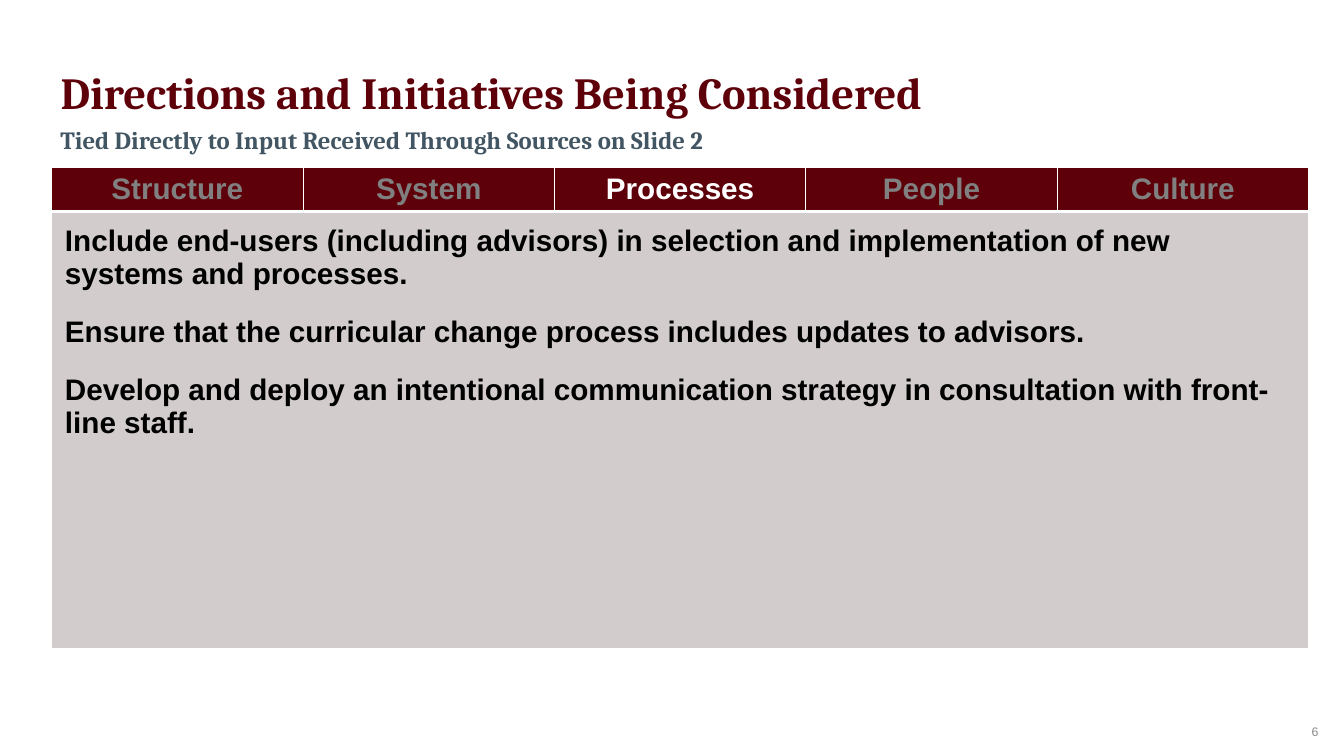
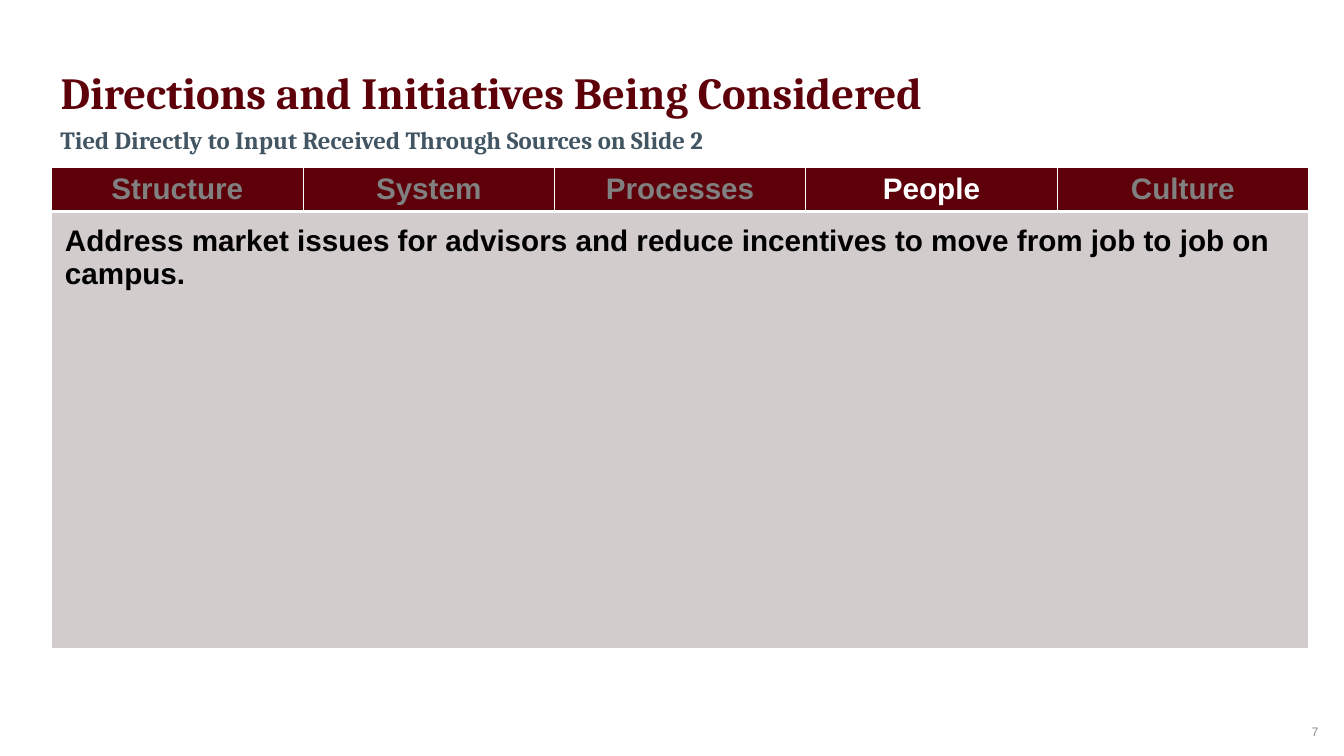
from lxml import etree
from pptx import Presentation
from pptx.dml.color import RGBColor
from pptx.enum.text import MSO_ANCHOR, MSO_AUTO_SIZE, PP_ALIGN
from pptx.oxml.ns import qn
from pptx.util import Pt

LEFT, CENTER, RIGHT = PP_ALIGN.LEFT, PP_ALIGN.CENTER, PP_ALIGN.RIGHT
TOP, MIDDLE = MSO_ANCHOR.TOP, MSO_ANCHOR.MIDDLE
NO_AUTOFIT = MSO_AUTO_SIZE.NONE
TITLE_ONLY = 5

COLORS = {
    "maroon": "5E0009",
    "slate": "425563",
    "muted": "808080",
    "number": "8C8C8C",
    "panel": "D2CCCC",
    "white": "FFFFFF",
    "black": "000000",
}
HEADING_FONT, BODY_FONT = "Cambria", "Arial"
SLIDE_WIDTH, SLIDE_HEIGHT = 1088, 612

TITLE_BOX = (41.8, 49, 831, 51)
SUBTITLE_BOX = (41.8, 97.2, 998, 31.7)
TABLE_BOX = (41.8, 135.4, 1017.5, 389.5)
NUMBER_BOX = (1039.7, 582.5, 34.6, 20.2)
HEADER_HEIGHT = 36
BODY_MARGIN = 10.8

TITLE = "Directions and Initiatives Being Considered"
SUBTITLE = "Tied Directly to Input Received Through Sources on Slide 2"
THEMES = ["Structure", "System", "Processes", "People", "Culture"]
FIRST_NUMBER = 6
SLIDES = [
    ("Processes", [
        "Include end-users (including advisors) in selection and implementation of new systems and processes.",
        "Ensure that the curricular change process includes updates to advisors.",
        "Develop and deploy an intentional communication strategy in consultation with front-line staff.",
    ]),
    ("People", [
        "Address market issues for advisors and reduce incentives to move from job to job on campus.",
    ]),
]


def color(name):
    return RGBColor.from_string(COLORS[name])


def write(frame, lines, font, size, color_name, bold=True, align=LEFT, space_after=0):
    frame.text = "\n".join(lines)
    for paragraph in frame.paragraphs:
        paragraph.alignment = align
        paragraph.space_after = Pt(space_after)
        paragraph.font.name = font
        paragraph.font.size = Pt(size)
        paragraph.font.bold = bold
        paragraph.font.color.rgb = color(color_name)


def set_frame(frame, wrap=True, anchor=TOP):
    frame.word_wrap = wrap
    frame.auto_size = NO_AUTOFIT
    frame.vertical_anchor = anchor


def add_title(slide, box):
    title = slide.shapes.title
    title.left, title.top, title.width, title.height = map(Pt, box)
    set_frame(title.text_frame, wrap=False)
    write(title.text_frame, [TITLE], HEADING_FONT, 36, "maroon")


def add_subtitle(slide, box):
    frame = slide.shapes.add_textbox(*map(Pt, box)).text_frame
    set_frame(frame)
    write(frame, [SUBTITLE], HEADING_FONT, 20, "slate")


def add_number(slide, box, number):
    frame = slide.shapes.add_textbox(*map(Pt, box)).text_frame
    set_frame(frame, anchor=MIDDLE)
    write(frame, [str(number)], BODY_FONT, 10, "number", bold=False, align=RIGHT)


def style_cell(cell, fill_name, bottom_width=1):
    properties = cell._tc.get_or_add_tcPr()
    for side, width in (("L", 1), ("R", 1), ("T", 1), ("B", bottom_width)):
        line = etree.SubElement(properties, qn(f"a:ln{side}"), w=str(Pt(width)))
        fill = etree.SubElement(line, qn("a:solidFill"))
        etree.SubElement(fill, qn("a:srgbClr"), val=COLORS["white"])
    cell.fill.solid()
    cell.fill.fore_color.rgb = color(fill_name)


def add_theme_table(slide, box, active_theme, initiatives):
    left, top, width, height = box
    table = slide.shapes.add_table(
        2, len(THEMES), Pt(left), Pt(top), Pt(width), Pt(height)).table
    table.first_row = table.horz_banding = False
    table.rows[0].height = Pt(HEADER_HEIGHT)
    table.rows[1].height = Pt(height - HEADER_HEIGHT)

    for index, theme in enumerate(THEMES):
        table.columns[index].width = Pt(width / len(THEMES))
        header = table.cell(0, index)
        style_cell(header, "maroon", bottom_width=3)
        style_cell(table.cell(1, index), "panel")
        header.vertical_anchor = MIDDLE
        write(header.text_frame, [theme], BODY_FONT, 24,
              "white" if theme == active_theme else "muted", align=CENTER)

    body = table.cell(1, 0)
    body.merge(table.cell(1, len(THEMES) - 1))
    body.margin_left = body.margin_right = Pt(BODY_MARGIN)
    body.margin_top = body.margin_bottom = Pt(BODY_MARGIN)
    write(body.text_frame, initiatives, BODY_FONT, 24, "black", space_after=20)


def add_theme_slide(presentation, number, active_theme, initiatives):
    slide = presentation.slides.add_slide(presentation.slide_layouts[TITLE_ONLY])
    add_number(slide, NUMBER_BOX, number)
    add_title(slide, TITLE_BOX)
    add_subtitle(slide, SUBTITLE_BOX)
    add_theme_table(slide, TABLE_BOX, active_theme, initiatives)


def main():
    presentation = Presentation()
    presentation.slide_width = Pt(SLIDE_WIDTH)
    presentation.slide_height = Pt(SLIDE_HEIGHT)
    for number, (theme, initiatives) in enumerate(SLIDES, FIRST_NUMBER):
        add_theme_slide(presentation, number, theme, initiatives)
    presentation.save("out.pptx")


if __name__ == "__main__":
    main()
